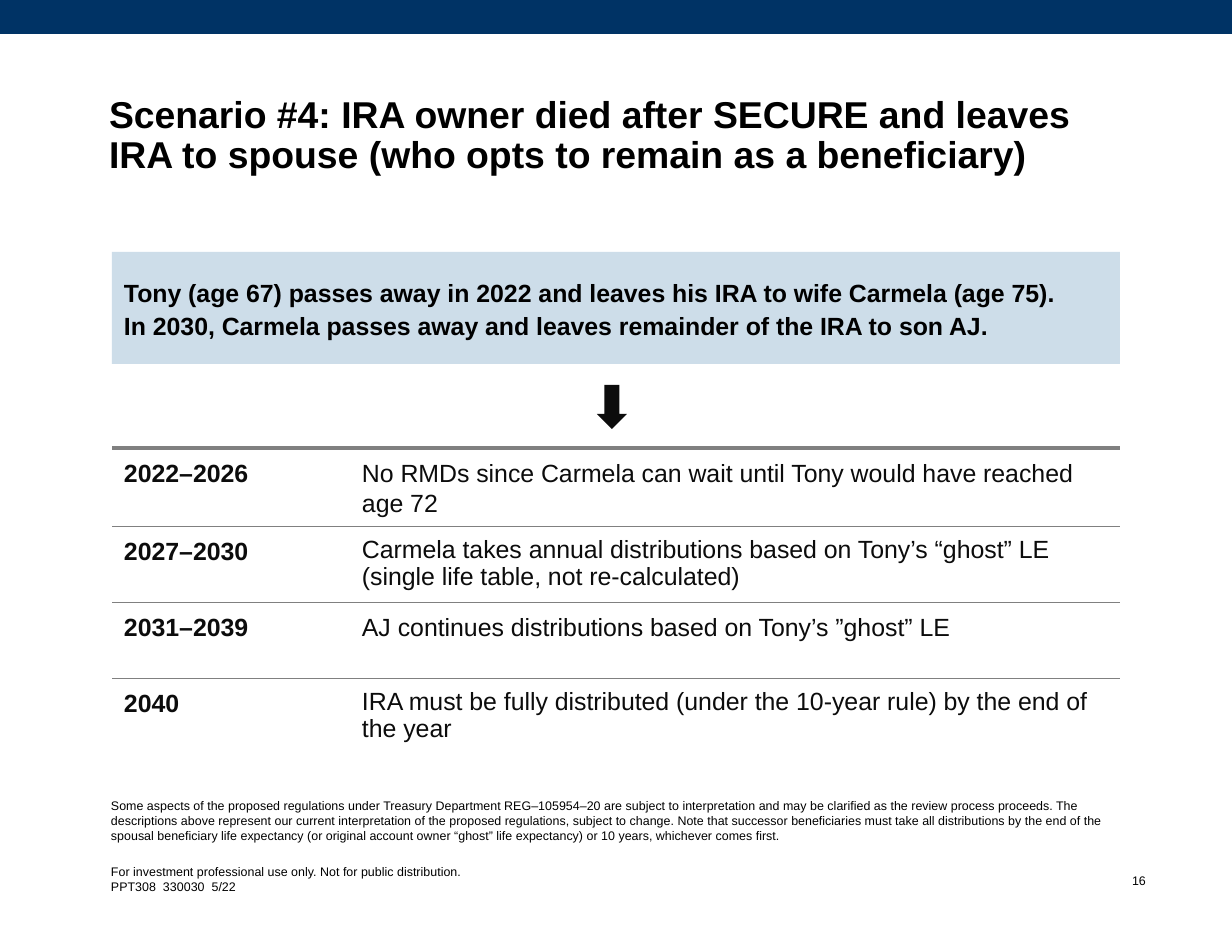
"""Build the inherited IRA scenario slide with its year-by-year table."""
from lxml.etree import SubElement
from pptx import Presentation
from pptx.dml.color import RGBColor
from pptx.enum.shapes import MSO_SHAPE as Shape
from pptx.enum.text import MSO_ANCHOR as Anchor, MSO_AUTO_SIZE as AutoSize, PP_ALIGN as Align
from pptx.oxml.ns import qn
from pptx.util import Emu, Pt

EMU_PER_PX = 914400 / 112
NAVY = RGBColor(0x00, 0x33, 0x65)
PALE_BLUE = RGBColor(0xCD, 0xDD, 0xE9)
BLACK = RGBColor(0x00, 0x00, 0x00)
INK = RGBColor(0x0C, 0x0C, 0x0C)
GRAY = RGBColor(0x80, 0x80, 0x80)

TITLE = "Scenario #4: IRA owner died after SECURE and leaves IRA to spouse (who opts to remain as a beneficiary)"
SUMMARY = (
    "Tony (age 67) passes away in 2022 and leaves his IRA to wife Carmela (age 75).\v"
    "In 2030, Carmela passes away and leaves remainder of the IRA to son AJ."
)
FOOTNOTE = (
    "Some aspects of the proposed regulations under Treasury Department REG–105954–20 are subject to "
    "interpretation and may be clarified as the review process proceeds. The descriptions above represent "
    "our current interpretation of the proposed regulations, subject to change. Note that successor "
    "beneficiaries must take all distributions by the end of the spousal beneficiary life expectancy "
    "(or original account owner “ghost” life expectancy) or 10 years, whichever comes first."
)
DISCLAIMER = "For investment professional use only. Not for public distribution.\nPPT308  330030  5/22"
PERIODS = [
    ("2022–2026", "No RMDs since Carmela can wait until Tony would have reached age 72", 1.1),
    ("2027–2030", "Carmela takes annual distributions based on Tony’s “ghost” LE (single life table, not re-calculated)", 1),
    ("2031–2039", "AJ continues distributions based on Tony’s ”ghost” LE", 1.1),
    ("2040", "IRA must be fully distributed (under the 10-year rule) by the end of the year", 1),
]


def px(length):
    return Emu(round(length * EMU_PER_PX))


def write(text_frame, text, size, color=BLACK, bold=False, spacing=1, align=Align.LEFT):
    text_frame.text = text
    for paragraph in text_frame.paragraphs:
        paragraph.alignment = align
        paragraph.line_spacing = spacing
        for run in paragraph.runs:
            run.font.name = "Arial"
            run.font.size = Pt(size)
            run.font.bold = bold
            run.font.color.rgb = color


def set_frame(text_frame, anchor=Anchor.TOP, wrap=True, left_margin=12, right_margin=12):
    text_frame.auto_size = AutoSize.NONE
    text_frame.word_wrap = wrap
    text_frame.vertical_anchor = anchor
    text_frame.margin_left, text_frame.margin_right = px(left_margin), px(right_margin)
    text_frame.margin_top = text_frame.margin_bottom = px(6)


def add_title(slide):
    title = slide.shapes.title
    title.left, title.top, title.width, title.height = px(97), px(90), px(1024), px(39)
    set_frame(title.text_frame)
    write(title.text_frame, TITLE, 24, bold=True, spacing=0.9)


def add_filled_shape(slide, kind, left, top, width, height, color):
    shape = slide.shapes.add_shape(kind, px(left), px(top), px(width), px(height))
    shape.shadow.inherit = False
    shape.fill.solid()
    shape.fill.fore_color.rgb = color
    shape.line.fill.background()
    return shape


def add_small_text(slide, text, left, top, width, height, align=Align.LEFT, spacing=1, **frame):
    box = slide.shapes.add_textbox(px(left), px(top), px(width), px(height))
    set_frame(box.text_frame, **frame)
    write(box.text_frame, text, 8, spacing=spacing, align=align)


def set_borders(cell, top, bottom):
    properties = cell._tc.get_or_add_tcPr()
    for position, (side, width) in enumerate((("L", 0), ("R", 0), ("T", top), ("B", bottom))):
        line = SubElement(properties, qn(f"a:ln{side}"), w=str(int(Pt(width))))
        if width:
            fill = SubElement(line, qn("a:solidFill"))
            SubElement(fill, qn("a:srgbClr"), val=str(GRAY))
        else:
            SubElement(line, qn("a:noFill"))
        properties.insert(position, line)


def add_period_table(slide):
    frame = slide.shapes.add_table(len(PERIODS), 2, px(112), px(448), px(1008), px(306))
    table = frame.table
    table.first_row = table.horz_banding = False
    table.columns[0].width, table.columns[1].width = px(238), px(770)
    rules = [2.25] + [1] * (len(PERIODS) - 1) + [0]
    for index, (years, action, spacing) in enumerate(PERIODS):
        table.rows[index].height = px(78 if index == 0 else 76)
        for column, (text, line_spacing) in enumerate(((years, 1.1), (action, spacing))):
            cell = table.cell(index, column)
            cell.fill.background()
            cell.margin_left = cell.margin_right = px(12)
            cell.margin_top = cell.margin_bottom = px(9)
            write(cell.text_frame, text, 16, INK, bold=column == 0, spacing=line_spacing)
            set_borders(cell, rules[index], rules[index + 1])


def main():
    presentation = Presentation()
    presentation.slide_width, presentation.slide_height = px(1232), px(952)
    slide = presentation.slides.add_slide(presentation.slide_layouts[5])
    add_filled_shape(slide, Shape.RECTANGLE, 0, 0, 1232, 34, NAVY)
    add_small_text(slide, "16", 1126, 869, 26, 26, Align.RIGHT, 0.9, left_margin=0, right_margin=6)
    add_small_text(slide, DISCLAIMER, 99, 858, 381, 43, wrap=False)
    add_title(slide)
    summary = add_filled_shape(slide, Shape.RECTANGLE, 112, 252, 1008, 112, PALE_BLUE)
    set_frame(summary.text_frame, Anchor.MIDDLE)
    write(summary.text_frame, SUMMARY, 16, bold=True, spacing=1.1)
    add_small_text(slide, FOOTNOTE, 99, 821, 1025, 28, anchor=Anchor.BOTTOM)
    add_period_table(slide)
    add_filled_shape(slide, Shape.DOWN_ARROW, 597, 385, 30, 44, INK)
    presentation.save("out.pptx")


if __name__ == "__main__":
    main()
